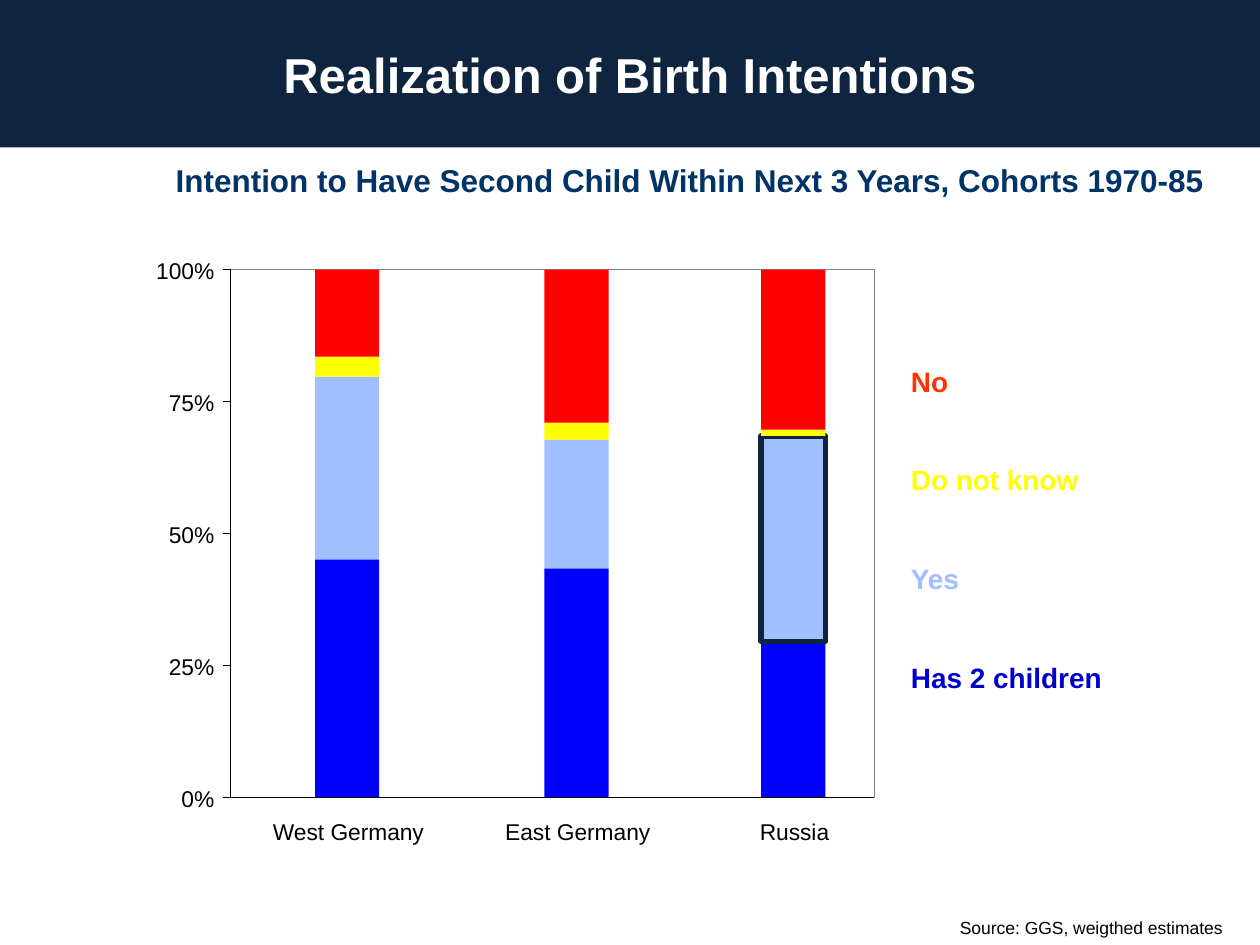
from dataclasses import dataclass
from itertools import accumulate

from pptx import Presentation
from pptx import util as u
from pptx.dml.color import RGBColor
from pptx.enum import shapes, text
from pptx.oxml.ns import qn
from lxml import etree

W, H = 10, 7.5
FONT = "Arial"
COLORS = {
    "navy": "0F243E", "heading": "003366", "white": "FFFFFF", "black": "000000",
    "frame": "808080", "blue": "0000FF", "light": "9FBFFF", "yellow": "FFFF00",
    "red": "FF0000", "legend_blue": "0000CC", "legend_red": "FF3300",
}
LEFT, CENTER, RIGHT = text.PP_ALIGN.LEFT, text.PP_ALIGN.CENTER, text.PP_ALIGN.RIGHT


@dataclass(frozen=True)
class Box:
    x: float
    y: float
    w: float
    h: float


@dataclass(frozen=True)
class Style:
    size: float
    color: str = "black"
    bold: bool = False
    align: text.PP_ALIGN = LEFT
    inset: bool = False


@dataclass(frozen=True)
class Country:
    name: str
    x: float
    shares: tuple[float, ...]  # percent, from the bottom segment up
    outlined: int | None = None


@dataclass(frozen=True)
class Answer:
    name: str
    fill: str
    label_color: str


PLOT = Box(1.83, 2.14, 5.11, 4.19)
BAR_W = 0.51
TICK = 0.06
LABEL_H = 0.22
TICK_LABEL_W, COUNTRY_LABEL_W, LEGEND_W = 0.6, 1.4, 1.7
LEGEND_TOP, LEGEND_BOTTOM = 2.89, 5.24
COUNTRIES = (
    Country("West Germany", 2.5, (45.1, 34.6, 3.8, 16.5)),
    Country("East Germany", 4.32, (43.4, 24.4, 3.2, 29)),
    Country("Russia", 6.04, (29.6, 38.9, 1.2, 30.3), outlined=1),
)
ANSWERS = (
    Answer("Has 2 children", "blue", "legend_blue"),
    Answer("Yes", "light", "light"),
    Answer("Do not know", "yellow", "yellow"),
    Answer("No", "red", "legend_red"),
)


def rgb(name: str) -> RGBColor:
    return RGBColor.from_string(COLORS[name])


def level(percent: float) -> float:
    """Height on the slide of a value on the percent axis."""
    return PLOT.y + PLOT.h * (1 - percent / 100)


def emu(box: Box) -> list[u.Length]:
    return [u.Inches(v) for v in (box.x, box.y, box.w, box.h)]


def write(tf, words: str, style: Style) -> None:
    p = tf.paragraphs[0]
    p.alignment = style.align
    r = p.add_run()
    r.text = words
    r.font.name = FONT
    r.font.size = u.Pt(style.size)
    r.font.bold = style.bold
    r.font.color.rgb = rgb(style.color)


def add_label(s, words: str, box: Box, style: Style) -> None:
    tf = s.shapes.add_textbox(*emu(box)).text_frame
    tf.word_wrap = True
    if not style.inset:
        tf.margin_left = tf.margin_top = tf.margin_right = tf.margin_bottom = 0
    write(tf, words, style)


def add_rect(s, box: Box, fill: str | None = None, line: str | None = None,
             width: float = 0.75):
    sp = s.shapes.add_shape(shapes.MSO_SHAPE.RECTANGLE, *emu(box))
    sp.shadow.inherit = False
    if fill:
        sp.fill.solid()
        sp.fill.fore_color.rgb = rgb(fill)
    else:
        sp.fill.background()
    if line:
        sp.line.color.rgb = rgb(line)
        sp.line.width = u.Pt(width)
    else:
        sp.line.fill.background()
    return sp


def add_line(s, x1: float, y1: float, x2: float, y2: float) -> None:
    line = s.shapes.add_connector(shapes.MSO_CONNECTOR.STRAIGHT,
                                  *(u.Inches(v) for v in (x1, y1, x2, y2)))
    line.line.color.rgb = rgb("black")
    line.line.width = u.Pt(0.5)
    etree.SubElement(line._element.spPr, qn("a:effectLst"))


def add_bars(s) -> None:
    for i, answer in enumerate(ANSWERS):
        for c in COUNTRIES:
            tops = list(accumulate(c.shares))
            box = Box(c.x, level(tops[i]), BAR_W, PLOT.h * c.shares[i] / 100)
            add_rect(s, box, answer.fill, "navy" if c.outlined == i else None, 3)


def add_axes(s) -> None:
    bottom = level(0)
    add_line(s, PLOT.x, PLOT.y, PLOT.x, bottom)
    add_line(s, PLOT.x, bottom, PLOT.x + PLOT.w, bottom)
    for percent in range(0, 101, 25):
        y = level(percent)
        add_line(s, PLOT.x - TICK, y, PLOT.x, y)
        x = PLOT.x - 0.13 - TICK_LABEL_W
        add_label(s, f"{percent}%", Box(x, y - 0.1, TICK_LABEL_W, LABEL_H),
                  Style(13, align=RIGHT))
    for c in COUNTRIES:
        x = c.x + 0.01 + (BAR_W - COUNTRY_LABEL_W) / 2
        add_label(s, c.name, Box(x, bottom + 0.16, COUNTRY_LABEL_W, LABEL_H),
                  Style(13, align=CENTER))


def add_legend(s) -> None:
    step = (LEGEND_BOTTOM - LEGEND_TOP) / (len(ANSWERS) - 1)
    for row, a in enumerate(reversed(ANSWERS)):
        box = Box(7.23, LEGEND_TOP + step * row, LEGEND_W, 0.27)
        add_label(s, a.name, box, Style(16, a.label_color, bold=True))


def main() -> None:
    prs = Presentation()
    prs.slide_width, prs.slide_height = u.Inches(W), u.Inches(H)
    s = prs.slides.add_slide(prs.slide_layouts[6])

    add_label(s, "Intention to Have Second Child Within Next 3 Years, Cohorts 1970-85",
              Box(1.15, 1.23, 8.65, 0.4), Style(18, "heading", True, CENTER, True))
    add_label(s, "Source: GGS, weigthed estimates",
              Box(7.36, 7.23, 2.6, 0.27), Style(10, align=CENTER, inset=True))
    add_legend(s)
    add_rect(s, PLOT, line="frame")
    add_bars(s)
    add_axes(s)

    banner = add_rect(s, Box(0, 0, W, 1.17), "navy")
    banner.text_frame.vertical_anchor = text.MSO_ANCHOR.MIDDLE
    write(banner.text_frame, "Realization of Birth Intentions",
          Style(28, "white", True, CENTER))
    prs.save("out.pptx")


if __name__ == "__main__":
    main()
